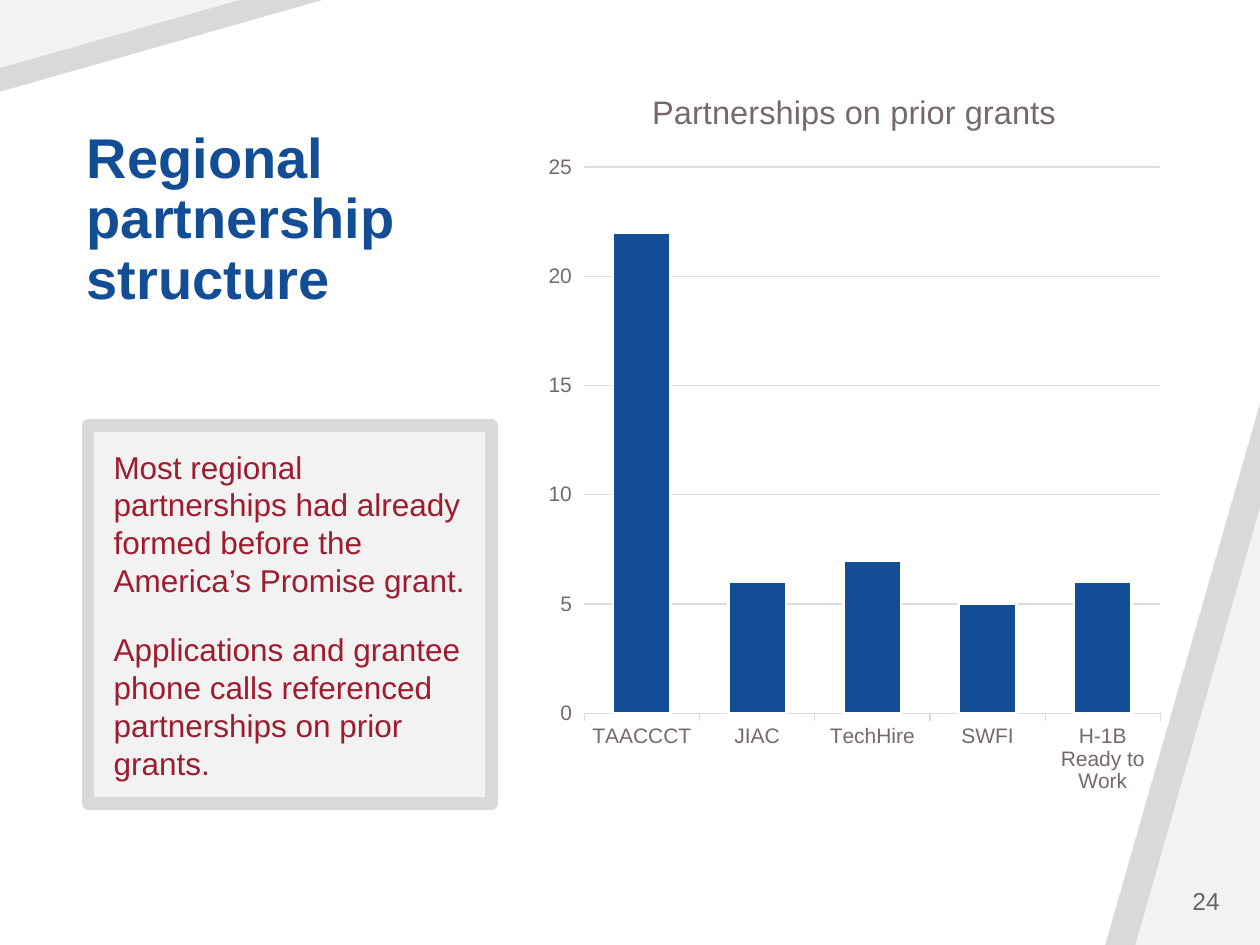
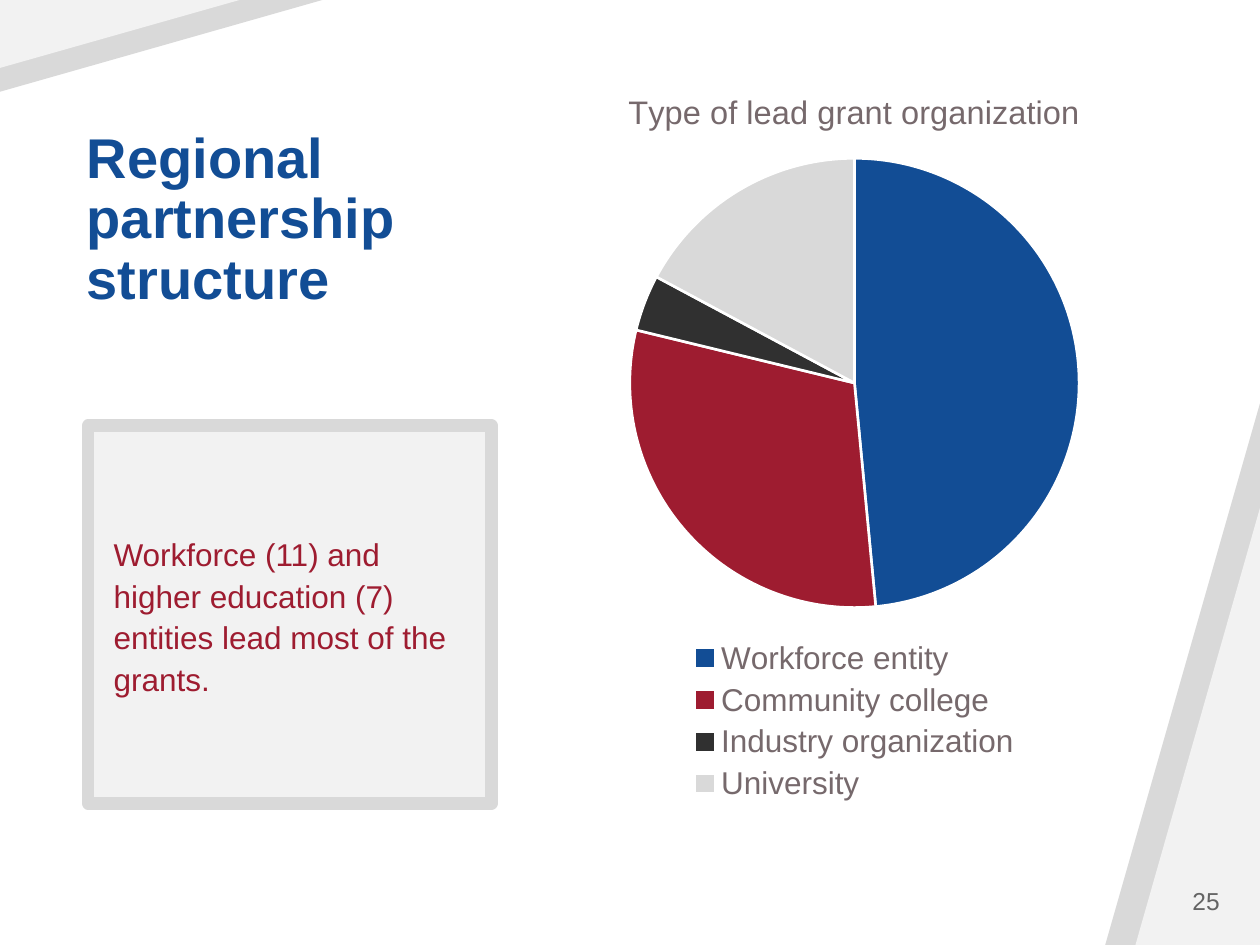
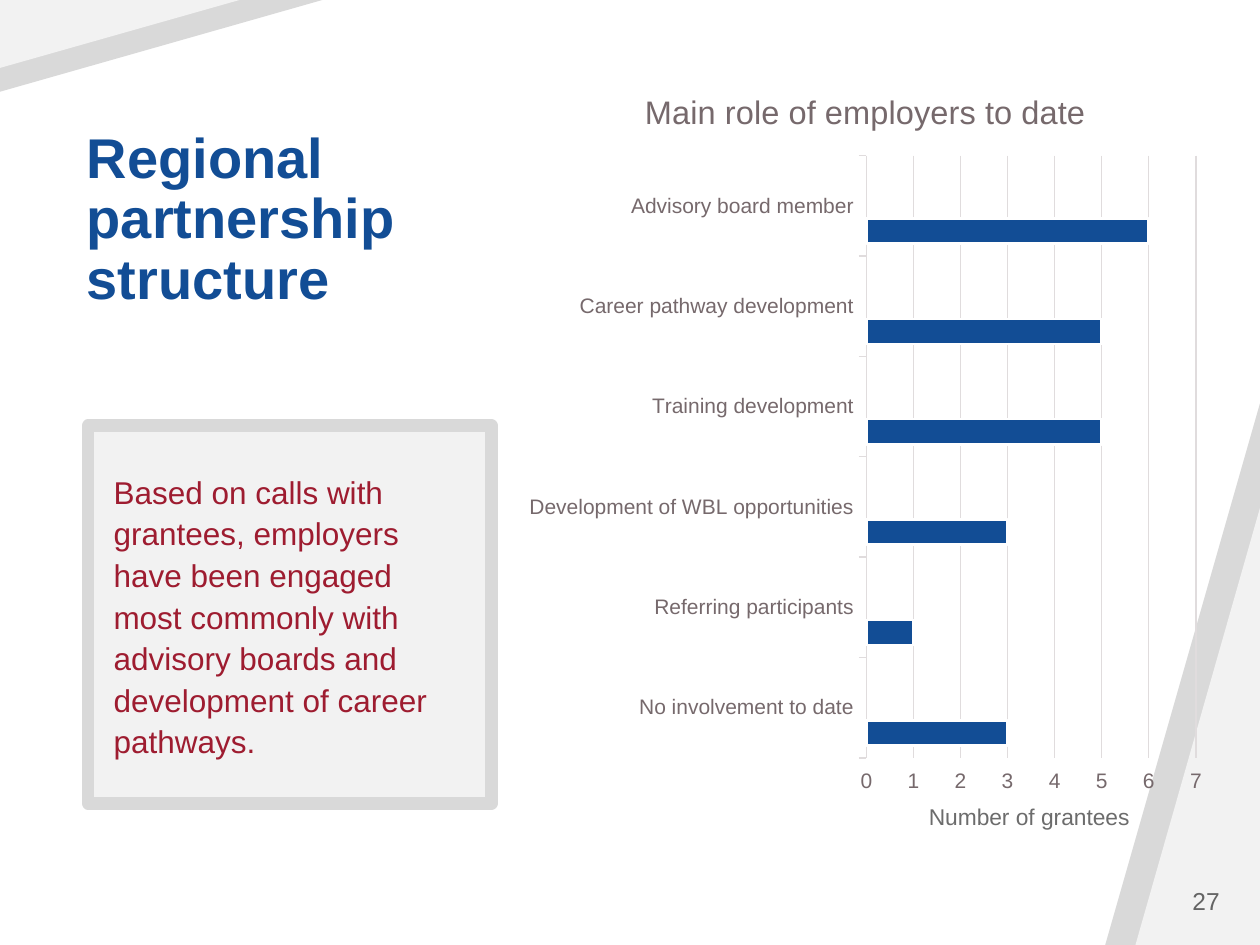
from pptx import Presentation
from pptx.chart.data import CategoryChartData
from pptx.dml.color import RGBColor
from pptx.enum.chart import XL_CHART_TYPE, XL_LEGEND_POSITION, XL_TICK_MARK
from pptx.enum.shapes import MSO_SHAPE
from pptx.enum.text import MSO_ANCHOR, MSO_AUTO_SIZE, PP_ALIGN
from pptx.util import Cm, Pt

COLUMN = XL_CHART_TYPE.COLUMN_CLUSTERED
BAR = XL_CHART_TYPE.BAR_CLUSTERED
PIE = XL_CHART_TYPE.PIE
BOTTOM = XL_LEGEND_POSITION.BOTTOM
TICK_OUT = XL_TICK_MARK.OUTSIDE
RECTANGLE = MSO_SHAPE.RECTANGLE
RIGHT_TRIANGLE = MSO_SHAPE.RIGHT_TRIANGLE
MIDDLE, TOP = MSO_ANCHOR.MIDDLE, MSO_ANCHOR.TOP
LEFT, CENTER, RIGHT = PP_ALIGN.LEFT, PP_ALIGN.CENTER, PP_ALIGN.RIGHT
NO_FIT = MSO_AUTO_SIZE.NONE

FONT = "Arial"
COLORS = {
    "blue": "124D95", "red": "9E1C30", "charcoal": "303030",
    "band": "D9D9D9", "panel": "F2F2F2", "white": "FFFFFF",
    "chart": "242021", "label": "76696C", "grid": "E0DCDD",
    "number": "646464", "caption": "6C6C6C",
}
SERIES_COLORS = ["blue", "red", "charcoal", "band"]

# Boxes are left, top, width, height in centimetres
SLIDE_W, SLIDE_H = 25.4, 19.05
TITLE_BOX = (1.75, 1.27, 8.2, 6.35)
MESSAGE_BOX = (1.78, 8.58, 8.13, 7.62)
CHART_BOX = (10.8, 1.27, 12.85, 15.01)
WIDE_CHART_BOX = (10.39, 1.27, 14.12, 15.01)
NUMBER_BOX = (22.76, 17.65, 2.08, 1.02)
CAPTION_BOX = (17.53, 16.05, 6.43, 0.81)


def rgb(name):
    return RGBColor.from_string(COLORS[name])


def lengths(box):
    return [Cm(value) for value in box]


def style_font(font, size, color, bold=False):
    font.name, font.size, font.bold = FONT, Pt(size), bold
    font.color.rgb = rgb(color)


def style_line(line, color, width):
    line.color.rgb = rgb(color)
    line.width = Pt(width)


def frame_text(tf, anchor, side, end):
    """Wrap the text, with the given side and top/bottom margins."""
    tf.word_wrap = True
    tf.auto_size = NO_FIT
    tf.vertical_anchor = anchor
    tf.margin_left = tf.margin_right = Cm(side)
    tf.margin_top = tf.margin_bottom = Cm(end)


def add_wedge(s, box, rotation, color):
    """Fill half of the box with a triangle turned by a quarter turn."""
    left, top, width, height = box
    inset = (width - height) / 2
    wedge = s.shapes.add_shape(
        RIGHT_TRIANGLE, *lengths((left + inset, top - inset, height, width)))
    wedge.rotation = rotation
    wedge.shadow.inherit = False
    wedge.fill.solid()
    wedge.fill.fore_color.rgb = rgb(color)
    wedge.line.fill.background()


def add_corners(s):
    for width, height, color in ((3.12, 10.92, "band"), (2.51, 8.81, "panel")):
        add_wedge(s, (SLIDE_W - width, SLIDE_H - height, width, height), 270, color)
    for width, height, color in ((6.5, 1.85, "band"), (4.83, 1.37, "panel")):
        add_wedge(s, (0, 0, width, height), 90, color)


def add_title(s, box, text):
    title = s.shapes.title
    title.left, title.top, title.width, title.height = lengths(box)
    tf = title.text_frame
    tf.text = text
    frame_text(tf, MIDDLE, 0, 0.13)
    p = tf.paragraphs[0]
    p.alignment, p.line_spacing = LEFT, 0.9
    style_font(p.runs[0].font, 32, "blue", bold=True)


def add_message(s, box, paragraphs, line_spacing):
    panel = s.shapes.add_shape(RECTANGLE, *lengths(box))
    panel.shadow.inherit = False
    panel.fill.solid()
    panel.fill.fore_color.rgb = rgb("panel")
    style_line(panel.line, "band", 7)
    tf = panel.text_frame
    frame_text(tf, MIDDLE, 0.51, 0.38)
    for i, text in enumerate(paragraphs):
        p = tf.add_paragraph() if i else tf.paragraphs[0]
        p.text = text
        p.alignment, p.line_spacing = LEFT, line_spacing
        p.space_before = Pt(18 if i else 0)
        style_font(p.runs[0].font, 18, "red")


def add_label(s, box, text, size, color, alignment, anchor):
    tf = s.shapes.add_textbox(*lengths(box)).text_frame
    tf.text = text
    frame_text(tf, anchor, 0.25, 0.13)
    p = tf.paragraphs[0]
    p.alignment = alignment
    style_font(p.runs[0].font, size, color)


def add_chart(s, box, kind, title, categories, series):
    data = CategoryChartData()
    data.categories = categories
    for name, values in series:
        data.add_series(name, values)
    chart = s.shapes.add_chart(kind, *lengths(box), data).chart
    style_font(chart.font, 10, "chart")
    chart.has_title = True
    chart.chart_title.include_in_layout = False
    tf = chart.chart_title.text_frame
    tf.text = title
    style_font(tf.paragraphs[0].runs[0].font, 18.6, "label")
    chart.has_legend = False
    return chart


def add_bar_chart(s, box, kind, title, categories, series):
    chart = add_chart(s, box, kind, title, categories, series)
    plot = chart.plots[0]
    plot.gap_width, plot.overlap, plot.vary_by_categories = 100, 0, False
    for bars, color in zip(plot.series, SERIES_COLORS):
        bars.format.fill.solid()
        bars.format.fill.fore_color.rgb = rgb(color)
        bars.invert_if_negative = False
        style_line(bars.format.line, "white", 1.5)
    for axis in (chart.category_axis, chart.value_axis):
        axis.major_tick_mark = TICK_OUT
        style_font(axis.tick_labels.font, 12, "label")
    style_line(chart.category_axis.format.line, "grid", 0.75)
    chart.value_axis.format.line.fill.background()
    chart.value_axis.has_major_gridlines = True
    style_line(chart.value_axis.major_gridlines.format.line, "grid", 0.75)


def add_pie_chart(s, box, title, categories, series):
    chart = add_chart(s, box, PIE, title, categories, series)
    plot = chart.plots[0]
    plot.vary_by_categories = True
    for i, color in enumerate(SERIES_COLORS):
        slice_format = plot.series[0].points[i].format
        slice_format.fill.solid()
        slice_format.fill.fore_color.rgb = rgb(color)
        style_line(slice_format.line, "white", 1.5)
    chart.has_legend = True
    chart.legend.position = BOTTOM
    chart.legend.include_in_layout = False
    style_font(chart.legend.font, 18, "label")


def add_partnership_slide(prs, number, paragraphs, line_spacing):
    s = prs.slides.add_slide(prs.slide_layouts[5])
    add_corners(s)
    add_title(s, TITLE_BOX, "Regional partnership structure")
    add_message(s, MESSAGE_BOX, paragraphs, line_spacing)
    add_label(s, NUMBER_BOX, str(number), 14, "number", RIGHT, MIDDLE)
    return s


def main():
    prs = Presentation()
    prs.slide_width, prs.slide_height = Cm(SLIDE_W), Cm(SLIDE_H)

    s = add_partnership_slide(prs, 24, [
        "Most regional partnerships had already formed before the "
        "America’s Promise grant.",
        "Applications and grantee phone calls referenced partnerships "
        "on prior grants.",
    ], 1.0)
    add_bar_chart(
        s, CHART_BOX, COLUMN, "Partnerships on prior grants",
        ["TAACCCT", "JIAC", "TechHire", "SWFI", "H-1B Ready to Work"],
        [("Partnerships on prior grants", [22, 6, 7, 5, 6])])

    s = add_partnership_slide(prs, 25, [
        "Workforce (11) and higher education (7) entities lead most of "
        "the grants.",
    ], 1.1)
    add_pie_chart(
        s, CHART_BOX, "Type of lead grant organization",
        ["Workforce entity", "Community college", "Industry organization",
         "University"],
        [("Series 1", [48, 30, 4, 17])])

    s = add_partnership_slide(prs, 27, [
        "Based on calls with grantees, employers have been engaged most "
        "commonly with advisory boards and development of career pathways.",
    ], 1.1)
    add_bar_chart(
        s, WIDE_CHART_BOX, BAR, "Main role of employers to date",
        ["No involvement to date", "Referring participants",
         "Development of WBL opportunities", "Training development",
         "Career pathway development", "Advisory board member"],
        [("Series 1", [3, 1, 3, 5, 5, 6]),
         ("Series 2", [None] * 6),
         ("Series 3", [None] * 6)])
    add_label(s, CAPTION_BOX, "Number of grantees", 13, "caption", CENTER, TOP)

    prs.save("out.pptx")


if __name__ == "__main__":
    main()
